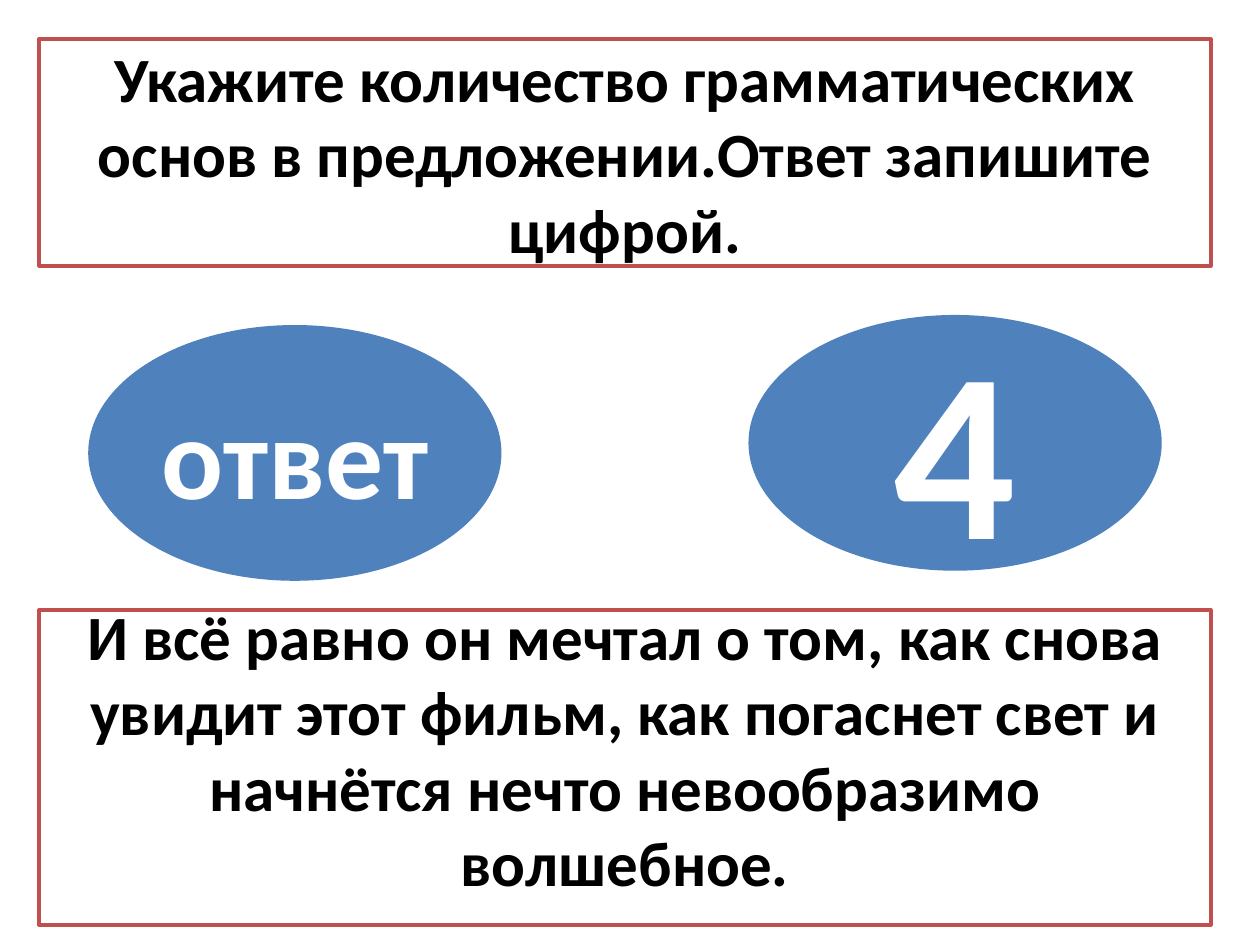
from dataclasses import dataclass

from pptx import Presentation
from pptx.dml.color import RGBColor
from pptx.enum.shapes import MSO_SHAPE
from pptx.enum.text import MSO_ANCHOR, MSO_AUTO_SIZE, PP_ALIGN
from pptx.shapes.autoshape import Shape
from pptx.slide import Slide
from pptx.util import Inches, Pt

COLORS = {"paper": "FFFFFF", "ink": "000000", "frame": "C0504D", "oval": "4F81BD"}
FRAME_LEFT, FRAME_WIDTH = 0.31, 9.3
OVAL_WIDTH, OVAL_HEIGHT = 3.28, 2.03


@dataclass
class Oval:
    left: float
    top: float
    text: str
    size: int


OVALS = [Oval(0.7, 2.58, "ответ", 66), Oval(5.94, 2.5, "4", 138)]
TASK = "Укажите количество грамматических основ в предложении.Ответ запишите цифрой."
QUOTE = (
    "И всё равно он мечтал о том, как снова увидит этот фильм, "
    "как погаснет свет и начнётся нечто невообразимо волшебное."
)


def color(name: str) -> RGBColor:
    return RGBColor.from_string(COLORS[name])


def write(shape: Shape, text: str, *, size: int, ink: str, bottom: float = 0.05) -> None:
    frame = shape.text_frame
    frame.word_wrap = True
    frame.auto_size = MSO_AUTO_SIZE.NONE
    frame.vertical_anchor = MSO_ANCHOR.MIDDLE
    frame.margin_bottom = Inches(bottom)
    line = frame.paragraphs[0]
    line.alignment = PP_ALIGN.CENTER
    run = line.add_run()
    run.text = text
    font = run.font
    font.name, font.size, font.bold = "Calibri", Pt(size), True
    font.color.rgb = color(ink)


def paint(shape: Shape, fill: str) -> None:
    shape.fill.solid()
    shape.fill.fore_color.rgb = color(fill)


def outline(shape: Shape) -> None:
    """Give a text panel its white fill and red border."""
    paint(shape, "paper")
    shape.line.color.rgb = color("frame")
    shape.line.width = Pt(2)


def add_title(slide: Slide) -> None:
    title = slide.shapes.title
    title.left, title.top = Inches(FRAME_LEFT), Inches(0.31)
    title.width, title.height = Inches(FRAME_WIDTH), Inches(1.8)
    outline(title)
    write(title, TASK, size=36, ink="ink")


def add_oval(slide: Slide, oval: Oval) -> None:
    shape = slide.shapes.add_shape(
        MSO_SHAPE.OVAL, Inches(oval.left), Inches(oval.top),
        Inches(OVAL_WIDTH), Inches(OVAL_HEIGHT),
    )
    shape.shadow.inherit = False
    paint(shape, "oval")
    shape.line.fill.background()
    write(shape, oval.text, size=oval.size, ink="paper")


def add_quote(slide: Slide) -> None:
    panel = slide.shapes.add_shape(
        MSO_SHAPE.RECTANGLE, Inches(FRAME_LEFT), Inches(4.84),
        Inches(FRAME_WIDTH), Inches(2.5),
    )
    panel.shadow.inherit = False
    outline(panel)
    write(panel, QUOTE, size=36, ink="ink", bottom=0.35)


def main() -> None:
    deck = Presentation()
    deck.slide_width, deck.slide_height = Inches(10), Inches(7.5)
    slide = deck.slides.add_slide(deck.slide_layouts[5])
    add_title(slide)
    for oval in OVALS:
        add_oval(slide, oval)
    add_quote(slide)
    deck.save("out.pptx")


if __name__ == "__main__":
    main()
